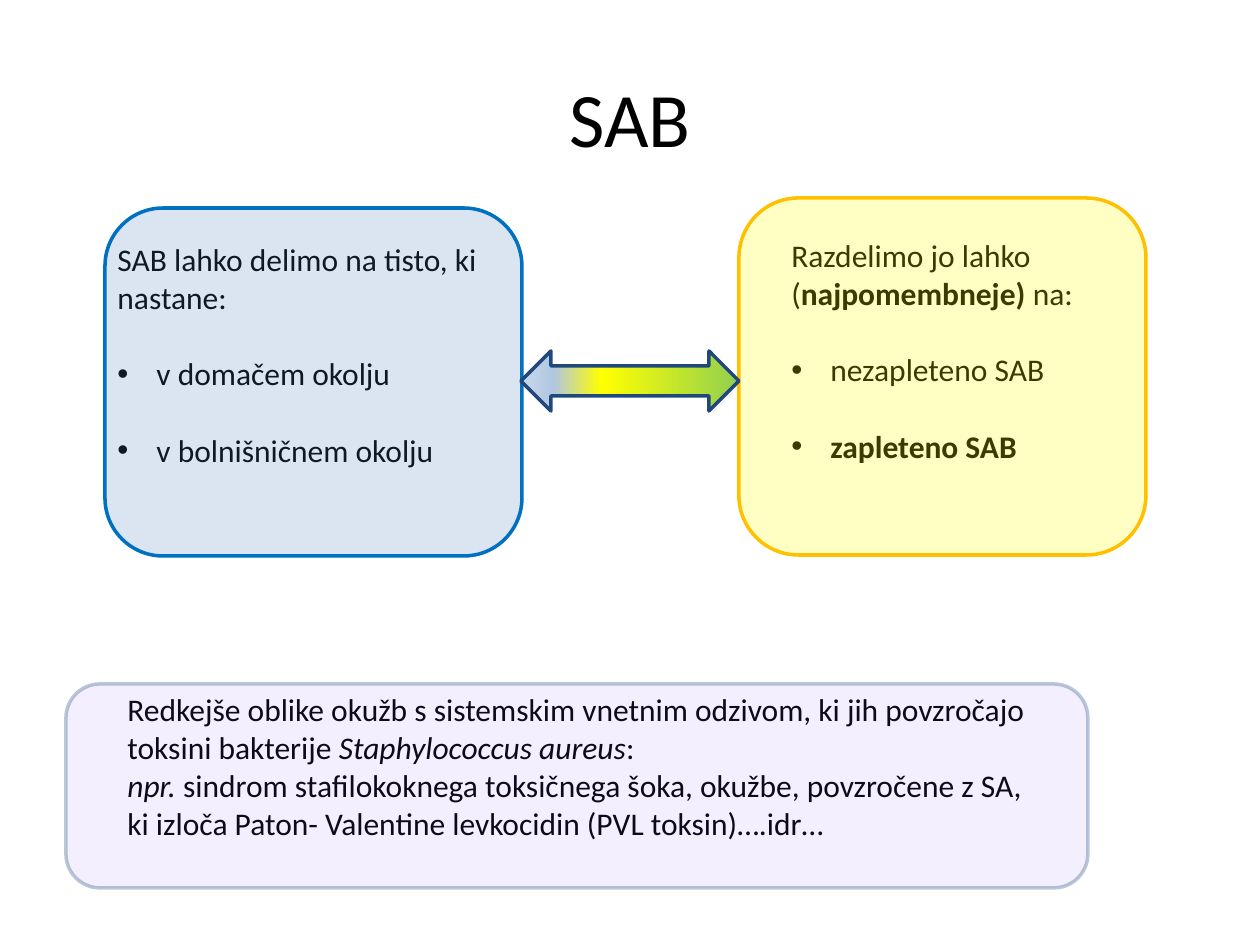
from lxml import etree
from pptx import Presentation
from pptx import util as u
from pptx.dml.color import RGBColor
from pptx.enum import shapes, text
from pptx.oxml.ns import qn

PX = 914400 // 126
FONT = "Calibri"
KIND = shapes.MSO_SHAPE

TITLE = ("SAB", (63, 38, 1134, 157))

# Paragraph: (bulleted, [(words, style)]), style "b" bold, "i" italic
PANELS = [
    dict(
        words=(105, 234, 397, 242), frame=(105, 208, 417, 348),
        fill="4F81BD", alpha=20, line="0070C0", solid=100,
        paras=[
            (False, [("SAB lahko delimo na tisto, ki nastane:", "")]),
            (True, [("v domačem okolju", "")]),
            (True, [("v bolnišničnem okolju", "")]),
        ],
    ),
    dict(
        words=(779, 230, 427, 242), frame=(739, 198, 407, 357),
        fill="FFFF00", alpha=23, line="FFC000", solid=100,
        paras=[
            (False, [("Razdelimo jo lahko (", ""), ("najpomembneje) ", "b"),
                     ("na:", "")]),
            (True, [("nezapleteno SAB", "")]),
            (True, [("zapleteno SAB", "b")]),
        ],
    ),
    dict(
        words=(115, 684, 942, 204), frame=(66, 684, 1022, 204),
        fill="9966FF", alpha=10, line="3A5F8C", solid=35,
        paras=[
            (False, [("Redkejše oblike okužb s sistemskim vnetnim odzivom, "
                      "ki jih povzročajo toksini bakterije ", ""),
                     ("Staphylococcus aureus", "i"), (":", "")]),
            (False, [("npr. ", "i"),
                     ("sindrom stafilokoknega toksičnega šoka, okužbe, "
                      "povzročene z SA, ki izloča Paton- Valentine levkocidin "
                      "(PVL toksin)….idr…", "")]),
        ],
    ),
]

ARROW = (521, 351, 218, 60)
STOPS = [(0, "92D050"), (63, "FFFF00"), (85, "B0C6E1"), (100, "CAD9EB")]


def color(code):
    return RGBColor.from_string(code)


def scale(box):
    return [v * PX for v in box]


def child(parent, tag, **attrs):
    return etree.SubElement(parent, qn(tag), **attrs)


def fade(fmt, percent):
    """Set the opacity of a solid fill or line."""
    if percent < 100:
        code = next(fmt._xPr.iter(qn("a:srgbClr")))
        child(code, "a:alpha", val=str(percent * 1000))


def add_text(slide, box, size):
    frame = slide.shapes.add_textbox(*scale(box)).text_frame
    frame.word_wrap = True
    return frame, dict(name=FONT, size=u.Pt(size))


def style(para, look):
    para.font.name, para.font.size = look["name"], look["size"]
    para.font.color.rgb = color("000000")


def add_bullet(para):
    """Hang a bullet one blank line below the paragraph before."""
    para.space_before = u.Pt(22)
    props = para._p.get_or_add_pPr()
    props.set("marL", str(u.Inches(0.31)))
    props.set("indent", str(-u.Inches(0.31)))
    mark = etree.Element(qn("a:buFont"), typeface="Arial")
    props.insert_element_before(mark, "a:tabLst", "a:defRPr", "a:extLst")
    mark.addnext(etree.Element(qn("a:buChar"), char="•"))


def add_paras(slide, box, paras):
    frame, look = add_text(slide, box, 18)
    for i, (bullet, runs) in enumerate(paras):
        para = frame.add_paragraph() if i else frame.paragraphs[0]
        style(para, look)
        if bullet:
            add_bullet(para)
        for words, face in runs:
            run = para.add_run()
            run.text = words
            if face:
                run.font.bold = face == "b"
                run.font.italic = face == "i"


def add_outline(slide, kind, box, line):
    shape = slide.shapes.add_shape(kind, *scale(box))
    shape.shadow.inherit = False
    shape.line.color.rgb = color(line)
    shape.line.width = u.Pt(2)
    return shape


def add_panel(slide, panel):
    add_paras(slide, panel["words"], panel["paras"])
    shape = add_outline(slide, KIND.ROUNDED_RECTANGLE, panel["frame"],
                        panel["line"])
    fade(shape.line.fill, panel["solid"])
    shape.fill.solid()
    shape.fill.fore_color.rgb = color(panel["fill"])
    fade(shape.fill, panel["alpha"])


def add_arrow(slide):
    shape = add_outline(slide, KIND.LEFT_RIGHT_ARROW, ARROW, "1F497D")
    shape.fill.gradient()
    shape.fill.gradient_angle = 180
    stops = next(shape._element.spPr.iter(qn("a:gsLst")))
    for old in list(stops):
        stops.remove(old)
    for place, code in STOPS:
        stop = child(stops, "a:gs", pos=str(place * 1000))
        child(stop, "a:srgbClr", val=code)


def add_title(slide):
    words, box = TITLE
    frame, look = add_text(slide, box, 44)
    frame.vertical_anchor = text.MSO_ANCHOR.MIDDLE
    para = frame.paragraphs[0]
    para.text = words
    para.alignment = text.PP_ALIGN.CENTER
    style(para, look)


def main():
    deck = Presentation()
    deck.slide_width, deck.slide_height = scale((1260, 945))
    slide = deck.slides.add_slide(deck.slide_layouts[6])
    add_title(slide)
    left, right, note = PANELS
    add_panel(slide, left)
    add_panel(slide, right)
    add_arrow(slide)
    add_panel(slide, note)
    deck.save("out.pptx")


if __name__ == "__main__":
    main()
